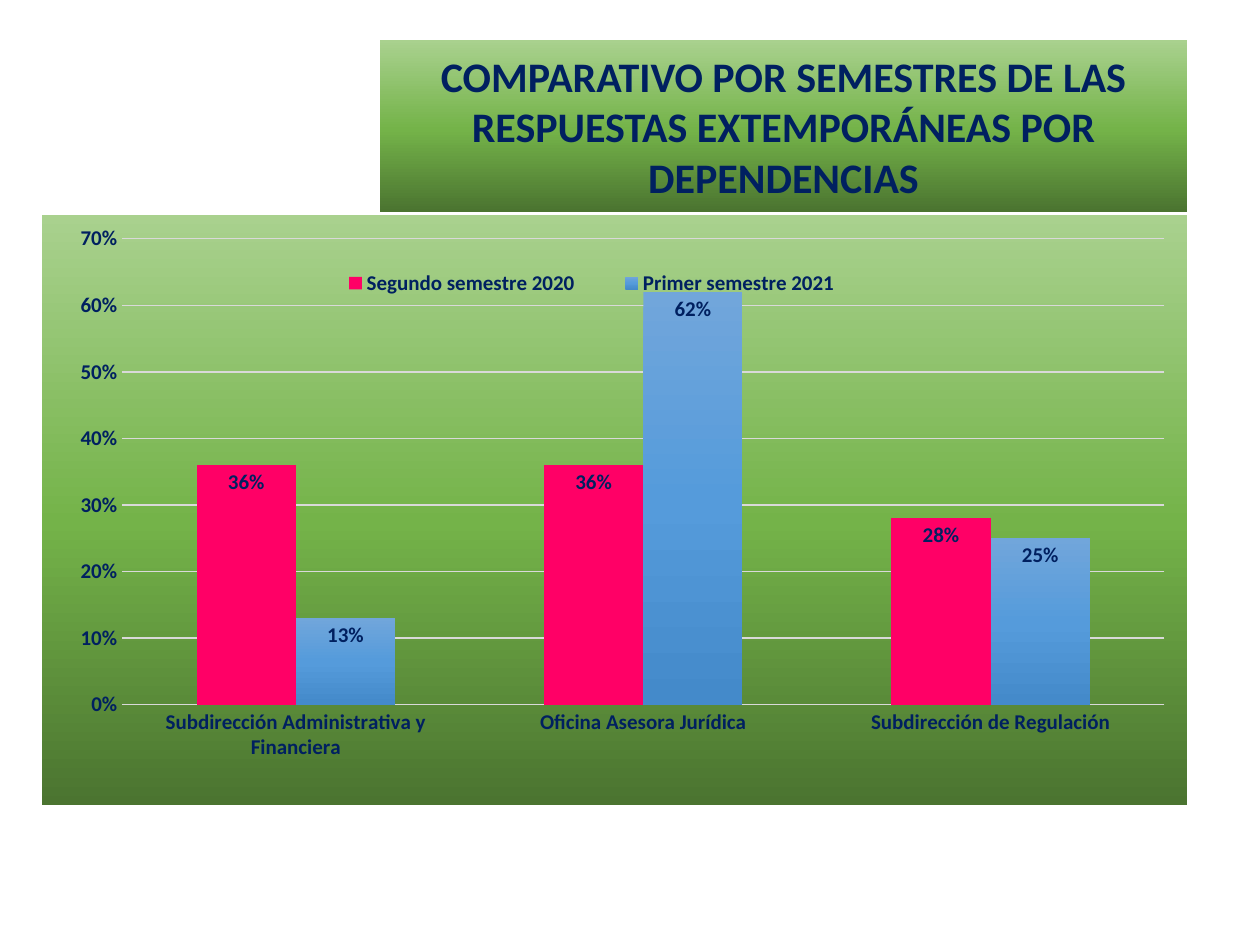
from dataclasses import dataclass

from lxml import etree
from pptx import Presentation
from pptx import util as u
from pptx.chart.data import CategoryChartData
from pptx.dml.color import RGBColor
from pptx.enum import chart as ch
from pptx.enum import shapes, text
from pptx.oxml.ns import qn


@dataclass(frozen=True)
class Theme:
    font: str = "Calibri"
    ink: str = "002060"
    grid: str = "D9D9D9"
    pink: str = "FF0066"
    green: tuple = ((0, "4B7430"), (48, "74B349"), (100, "A9D18E"))
    blue: tuple = ((0, "71A6DB"), (50, "559BDB"), (100, "448ACA"))
    title_size: int = 24
    chart_size: int = 12


class SlideBuilder:
    def __init__(self, slide, theme):
        self.s, self.theme = slide, theme

    def style_font(self, font, size):
        font.name, font.size, font.bold = self.theme.font, u.Pt(size), True
        font.color.rgb = RGBColor.from_string(self.theme.ink)

    def add_gradient(self, parent, stops, angle):
        grad = etree.SubElement(parent, qn("a:gradFill"), rotWithShape="1")
        stop_list = etree.SubElement(grad, qn("a:gsLst"))
        for pos, color in stops:
            gs = etree.SubElement(stop_list, qn("a:gs"), pos=str(pos * 1000))
            etree.SubElement(gs, qn("a:srgbClr"), val=color)
        etree.SubElement(grad, qn("a:lin"), ang=str(angle * 60000), scaled="0")

    def make_layout(self, x, y, w, h, inner=False):
        layout = etree.Element(qn("c:layout"))
        manual = etree.SubElement(layout, qn("c:manualLayout"))
        settings = {"xMode": "edge", "yMode": "edge", "x": x, "y": y, "w": w, "h": h}
        if inner:
            settings = {"layoutTarget": "inner", **settings}
        for tag, value in settings.items():
            etree.SubElement(manual, qn(f"c:{tag}"), val=str(value))
        return layout

    def title(self, box, lines):
        sp = self.s.shapes.add_shape(shapes.MSO_SHAPE.RECTANGLE, *map(u.Pt, box))
        self.add_gradient(sp._element.spPr, self.theme.green, 270)
        sp.line.fill.background()
        sp.shadow.inherit = False
        tf = sp.text_frame
        tf.word_wrap = True
        tf.vertical_anchor = text.MSO_ANCHOR.MIDDLE
        tf.text = "\n".join(lines)
        for p in tf.paragraphs:
            p.alignment = text.PP_ALIGN.CENTER
            self.style_font(p.font, self.theme.title_size)

    def column_chart(self, box, categories, series):
        data = CategoryChartData(number_format="0%")
        data.categories = categories
        for name, values in series.items():
            data.add_series(name, values)
        chart = self.s.shapes.add_chart(
            ch.XL_CHART_TYPE.COLUMN_CLUSTERED, *map(u.Pt, box), data).chart
        chart.has_title = False
        self.style_font(chart.font, self.theme.chart_size)

        # Chart background
        sp_pr = etree.Element(qn("c:spPr"))
        self.add_gradient(sp_pr, self.theme.green, 270)
        ln = etree.SubElement(sp_pr, qn("a:ln"))
        etree.SubElement(ln, qn("a:noFill"))
        root = chart._chartSpace
        root.find(qn("c:chart")).addnext(sp_pr)

        # Axes and gridlines
        for axis in (chart.category_axis, chart.value_axis):
            axis.major_tick_mark = axis.minor_tick_mark = ch.XL_TICK_MARK.NONE
            axis.format.line.fill.background()
            self.style_font(axis.tick_labels.font, self.theme.chart_size)
        axis = chart.value_axis
        axis.minimum_scale, axis.maximum_scale, axis.major_unit = 0, 0.7, 0.1
        axis.tick_labels.number_format = "0%"
        axis.tick_labels.number_format_is_linked = False
        axis.has_major_gridlines = True
        grid = axis.major_gridlines.format.line
        grid.width = u.Pt(0.75)
        grid.color.rgb = RGBColor.from_string(self.theme.grid)

        # Columns and their labels
        plot = chart.plots[0]
        plot.gap_width, plot.overlap, plot.vary_by_categories = 150, 0, False
        first, second = plot.series
        first.format.fill.solid()
        first.format.fill.fore_color.rgb = RGBColor.from_string(self.theme.pink)
        self.add_gradient(second._element.get_or_add_spPr(), self.theme.blue, 90)
        for ser in plot.series:
            ser.invert_if_negative = False
            labels = ser.data_labels
            labels.show_value = True
            labels.number_format, labels.number_format_is_linked = "0%", False
            labels.position = ch.XL_LABEL_POSITION.INSIDE_END
            self.style_font(labels.font, self.theme.chart_size)

        # Legend and plot placement
        chart.has_legend = True
        legend = chart.legend
        legend.position = ch.XL_LEGEND_POSITION.RIGHT
        legend.include_in_layout = False
        self.style_font(legend.font, self.theme.chart_size)
        plot_area = root.find(".//" + qn("c:plotArea"))
        for parent in (plot_area, legend._element):
            for old in parent.findall(qn("c:layout")):
                parent.remove(old)
        plot_area.insert(0, self.make_layout(0.07, 0.04, 0.91, 0.79, inner=True))
        legend._element.find(qn("c:legendPos")).addnext(
            self.make_layout(0.23, 0.09, 0.5, 0.05))


def main():
    prs = Presentation()
    prs.slide_width, prs.slide_height = u.Pt(720), u.Pt(540)
    slide = SlideBuilder(prs.slides.add_slide(prs.slide_layouts[6]), Theme())

    # Heading
    slide.title((217, 23, 461.5, 98), [
        "COMPARATIVO POR SEMESTRES DE LAS",
        "RESPUESTAS EXTEMPORÁNEAS POR DEPENDENCIAS",
    ])

    # Comparison by department
    slide.column_chart(
        (24, 123, 654.5, 337),
        ["Subdirección Administrativa y Financiera",
         "Oficina Asesora Jurídica",
         "Subdirección de Regulación"],
        {"Segundo semestre 2020": (0.36, 0.36, 0.28),
         "Primer semestre 2021": (0.13, 0.62, 0.25)})

    prs.save("out.pptx")


if __name__ == "__main__":
    main()
